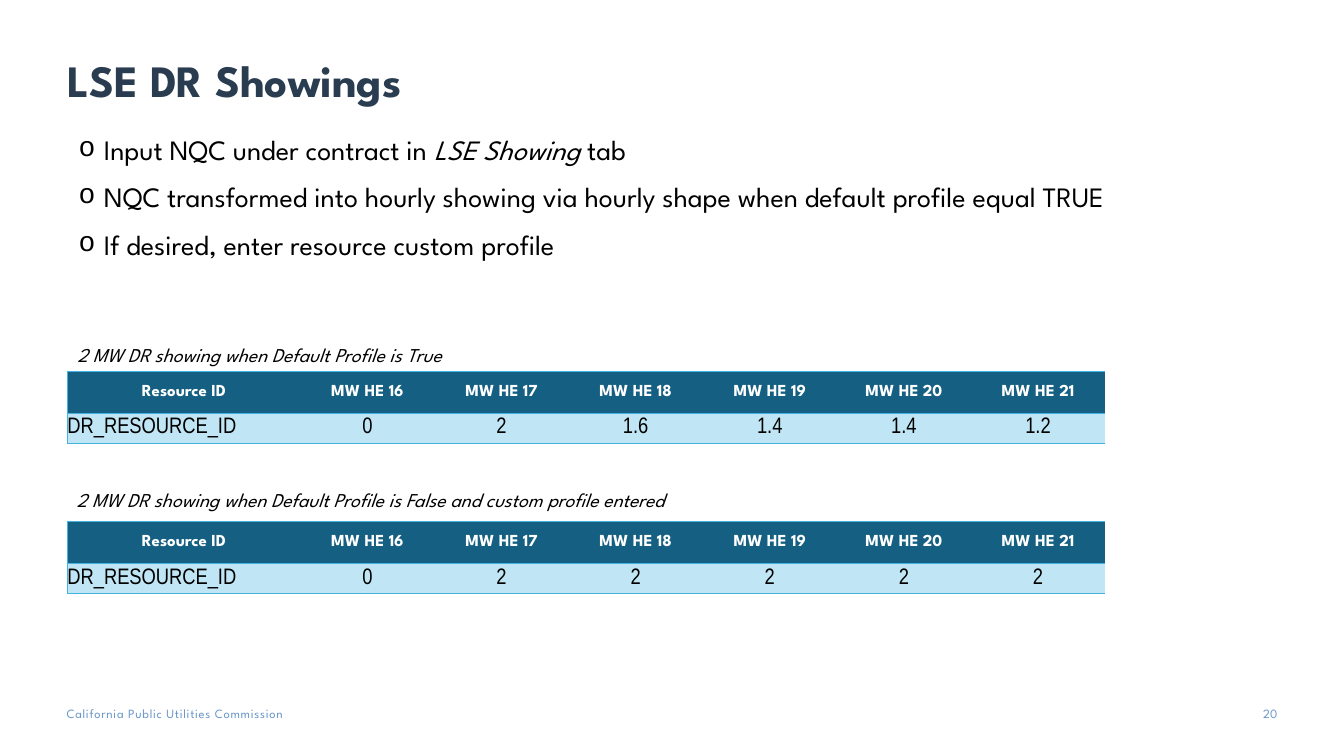
import dataclasses

import lxml.etree
import pptx
import pptx.dml.color
import pptx.enum.text
import pptx.oxml
import pptx.oxml.ns
import pptx.util

Cm = pptx.util.Cm
Pt = pptx.util.Pt
Align = pptx.enum.text.PP_ALIGN
Anchor = pptx.enum.text.MSO_ANCHOR
qn = pptx.oxml.ns.qn

HUES = {
    "title": "2A3C50",
    "foot": "6996C9",
    "text": "000000",
    "head": "156082",
    "label": "FFFFFF",
    "body": "C0E6F5",
    "rule": "44B3E1",
}
MAIN = "League Spartan"
DATA = "Arial Narrow"
SIDES = ("lnL", "lnR", "lnT", "lnB")


@dataclasses.dataclass
class Font:
    size: float
    hue: str
    name: str = MAIN
    bold: bool = False
    slant: bool = False
    gap: int = 0  # letter spacing, hundredths of a point


@dataclasses.dataclass
class Box:
    place: tuple[float, float, float, float]
    lines: list[list[str]]  # every second run of a line is italic
    font: Font
    pads: tuple[float, float, float, float] = (0, 0, 0, 0)
    align: Align = Align.LEFT
    anchor: Anchor = Anchor.TOP
    bullet: bool = False


@dataclasses.dataclass
class Grid:
    top: float
    loads: list[str]


FOOT = Font(9, "foot")
NOTE = Font(14, "text", slant=True)
PADS = (0, 0.13, 0.25, 0.13)
INSET = (0.25, 0.13, 0.25, 0.13)

BOXES = [
    Box((1.68, 17.78, 8.15, 0.38), [["California Public Utilities Commission"]],
        Font(9, "foot", gap=50)),
    Box((1.7, 1.02, 30.5, 1.8), [["LSE DR Showings"]],
        Font(32, "title", bold=True), PADS, anchor=Anchor.BOTTOM),
    Box((31.12, 17.78, 1.07, 0.51), [["20"]], FOOT, align=Align.RIGHT),
    Box((1.98, 3.2, 30.2, 4.78), [
        ["Input NQC under contract in ", "LSE Showing ", "tab"],
        ["NQC transformed into hourly showing via hourly shape "
         "when default profile equal TRUE"],
        ["If desired, enter resource custom profile"],
    ], Font(20, "text"), PADS, bullet=True),
    Box((1.7, 8.51, 22.35, 0.86),
        [["2 MW DR showing when Default Profile is True"]], NOTE, INSET),
    Box((1.68, 12.17, 21.82, 0.86),
        [["2 MW DR showing when Default Profile is False and custom profile entered"]],
        NOTE, INSET),
]

GRIDS = [
    Grid(9.35, ["0", "2", "1.6", "1.4", "1.4", "1.2"]),
    Grid(13.13, ["0", "2", "2", "2", "2", "2"]),
]
HEADS = ["Resource ID"] + [f"MW HE {hour}" for hour in range(16, 22)]
WIDTHS = [5.87] + [3.38] * 6
HEIGHTS = [1.07, 0.74]


def color(key: str) -> pptx.dml.color.RGBColor:
    return pptx.dml.color.RGBColor.from_string(HUES[key])


def style(run, font: Font, slant: bool) -> None:
    run.font.name = font.name
    run.font.size = Pt(font.size)
    run.font.bold = font.bold
    run.font.italic = slant
    run.font.color.rgb = color(font.hue)
    if font.gap:
        run._r.get_or_add_rPr().set("spc", str(font.gap))


def mark(para) -> None:
    """Give a paragraph a hanging round bullet."""
    props = para._p.get_or_add_pPr()
    props.set("marL", str(Cm(0.64)))
    props.set("indent", str(-Cm(0.64)))
    lxml.etree.SubElement(props, qn("a:buFont")).set("typeface", "Courier New")
    lxml.etree.SubElement(props, qn("a:buChar")).set("char", "o")


def draw_box(slide, box: Box) -> None:
    frame = slide.shapes.add_textbox(*map(Cm, box.place)).text_frame
    frame.word_wrap = True
    frame.vertical_anchor = box.anchor
    (frame.margin_left, frame.margin_top,
     frame.margin_right, frame.margin_bottom) = map(Cm, box.pads)
    for row, line in enumerate(box.lines):
        para = frame.add_paragraph() if row else frame.paragraphs[0]
        para.alignment = box.align
        if row:
            para.space_before = Pt(10)
        if box.bullet:
            mark(para)
        for spot, words in enumerate(line):
            run = para.add_run()
            run.text = words
            style(run, box.font, box.font.slant or spot % 2 == 1)


def edge(cell, shown: set[str]) -> None:
    """Rule the shown sides of a cell and clear the others."""
    props = cell._tc.get_or_add_tcPr()
    for side in SIDES:
        line = lxml.etree.SubElement(props, qn(f"a:{side}"))
        line.set("w", str(Pt(0.5)))
        if side in shown:
            fill = lxml.etree.SubElement(line, qn("a:solidFill"))
            lxml.etree.SubElement(fill, qn("a:srgbClr")).set("val", HUES["rule"])
        else:
            lxml.etree.SubElement(line, qn("a:noFill"))


def draw_grid(slide, grid: Grid) -> None:
    rows = [HEADS, ["DR_RESOURCE_ID"] + grid.loads]
    fonts = [Font(12, "label", bold=True), Font(16, "text", DATA)]
    table = slide.shapes.add_table(
        len(rows), len(HEADS), Cm(1.7), Cm(grid.top),
        Cm(sum(WIDTHS)), Cm(sum(HEIGHTS))).table
    table.first_row = table.horz_banding = False
    for col, width in zip(table.columns, WIDTHS):
        col.width = Cm(width)
    for row, height in zip(table.rows, HEIGHTS):
        row.height = Cm(height)

    for r, (row, font, hue) in enumerate(zip(rows, fonts, ("head", "body"))):
        for c, words in enumerate(row):
            cell = table.cell(r, c)
            edge(cell, {"lnT", "lnB"} if c else {"lnL", "lnT", "lnB"})
            cell.fill.solid()
            cell.fill.fore_color.rgb = color(hue)
            cell.vertical_anchor = Anchor.MIDDLE
            cell.margin_left = cell.margin_right = 0
            cell.margin_top = cell.margin_bottom = 0
            para = cell.text_frame.paragraphs[0]
            para.text = words
            para.alignment = Align.LEFT if r and not c else Align.CENTER
            style(para.runs[0], font, font.slant)


def main() -> None:
    deck = pptx.Presentation()
    deck.slide_width, deck.slide_height = Cm(33.87), Cm(19.05)
    slide = deck.slides.add_slide(deck.slide_layouts[6])

    # Title, bullets, captions and footer
    for box in BOXES:
        draw_box(slide, box)

    # Hourly showings
    for grid in GRIDS:
        draw_grid(slide, grid)

    deck.save("out.pptx")


if __name__ == "__main__":
    main()
